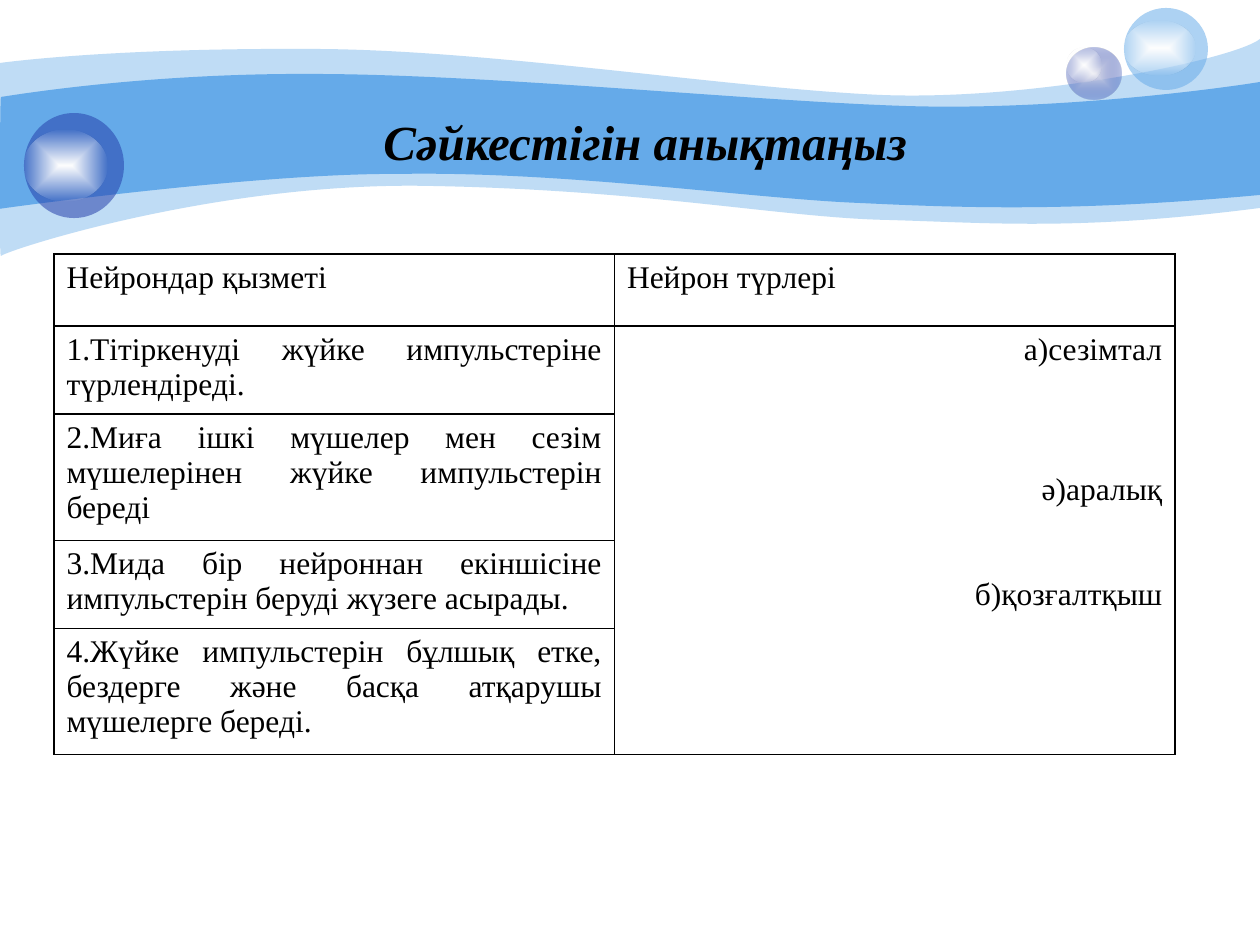
from lxml import etree
from pptx import Presentation
from pptx import util as u
from pptx.dml.color import RGBColor
from pptx.enum import shapes, text
from pptx.oxml import parse_xml
from pptx.oxml.ns import nsdecls, qn

PX_PER_INCH = 126
FONT = "Times New Roman"
COLORS = {"sky": "65AAE9", "navy": "233DA9", "pale": "E1E2ED",
          "white": "FFFFFF", "black": "000000"}

# Each outline: a start point, then lines (one point) and curves (three points)
PALE_WAVE = [
    [(0, 63)],
    [(30, 59), (135, 48), (311, 49)],
    [(486, 49), (725, 88), (881, 95)],
    [(1036, 101), (1235, 59), (1260, 39)],
    [(1260, 208)],
    [(1081, 231), (992, 223), (888, 220)],
    [(784, 218), (649, 190), (432, 186)],
    [(217, 181), (5, 251), (1, 256)],
    [(-1, 262), (0, 95), (0, 63)],
]
MAIN_WAVE = [
    [(1, 97)],
    [(3, 97), (139, 73), (312, 74)],
    [(486, 74), (750, 101), (905, 106)],
    [(1060, 111), (1230, 87), (1260, 82)],
    [(1260, 195)],
    [(1075, 212), (964, 208), (859, 203)],
    [(755, 199), (563, 171), (399, 174)],
    [(256, 173), (-3, 209), (-1, 209)],
    [(0, 209), (0, 97), (1, 97)],
]

HEADERS = ["Нейрондар қызметі", "Нейрон түрлері"]
FUNCTIONS = [
    "1.Тітіркенуді жүйке импульстеріне түрлендіреді.",
    "2.Миға ішкі мүшелер мен сезім мүшелерінен жүйке импульстерін береді",
    "3.Мида бір нейроннан екіншісіне импульстерін беруді жүзеге асырады.",
    "4.Жүйке импульстерін бұлшық етке, бездерге және басқа атқарушы "
    "мүшелерге береді.",
]
# Neuron types with the space before each, in points
NEURON_TYPES = [("а)сезімтал", 0), ("ә)аралық", 60), ("б)қозғалтқыш", 40)]
# Least heights: the rows grow with their text
ROW_HEIGHTS = [72] + [42] * len(FUNCTIONS)


def px(length):
    return u.Emu(round(length * 914400 / PX_PER_INCH))


def color(name):
    return RGBColor.from_string(COLORS[name])


def apply(target, formats):
    for name, value in formats.items():
        setattr(target, name, value)


def write(paragraph, words, size, alignment, **formats):
    run = paragraph.add_run()
    run.text = words
    paragraph.alignment = alignment
    apply(run.font, {"name": FONT, "size": u.Pt(size), **formats})
    run.font.color.rgb = color("black")


def paint(shape, name, opacity=100):
    shape.shadow.inherit = False
    shape.line.fill.background()
    shape.fill.solid()
    shape.fill.fore_color.rgb = color(name)
    if opacity < 100:
        tint = shape.fill._xPr.find(qn("a:solidFill"))[0]
        etree.SubElement(tint, qn("a:alpha"), val=str(opacity * 1000))


def paint_glow(shape, inner, outer, outer_opacity):
    """Fill from the middle outwards, with a see-through rim."""
    paint(shape, inner)
    properties = shape._element.spPr
    solid = properties.find(qn("a:solidFill"))
    properties.replace(solid, parse_xml(
        f'<a:gradFill {nsdecls("a")} rotWithShape="1"><a:gsLst>'
        f'<a:gs pos="0"><a:srgbClr val="{COLORS[inner]}"/></a:gs>'
        f'<a:gs pos="100000"><a:srgbClr val="{COLORS[outer]}">'
        f'<a:alpha val="{outer_opacity * 1000}"/></a:srgbClr></a:gs></a:gsLst>'
        '<a:path path="shape"><a:fillToRect l="50000" t="50000" r="50000" '
        'b="50000"/></a:path></a:gradFill>'))


def add_wave(slide, left, top, outline, opacity=100):
    places = [(px(x), px(y)) for segment in outline for x, y in segment]
    builder = slide.shapes.build_freeform(*places[0])
    builder.add_line_segments(places[1:], close=False)
    wave = builder.convert_to_shape(px(left), px(top))
    paint(wave, "sky", opacity)

    # Join each three points of a curve into one Bézier segment
    contour = next(wave._element.iter(qn("a:pathLst")))[0]
    lines = iter(contour.findall(qn("a:lnTo")))
    for segment in outline[1:]:
        steps = [next(lines) for _ in segment]
        if len(steps) == 3:
            curve = etree.Element(qn("a:cubicBezTo"))
            steps[0].addprevious(curve)
            for step in steps:
                curve.append(step[0])
                contour.remove(step)
    etree.SubElement(contour, qn("a:close"))


def add_bubble(slide, left, top, width, height, highlight, name, opacity, glow=False):
    """A ball with a highlight given as (offset down, width, height)."""
    def ellipse(*box):
        return slide.shapes.add_shape(shapes.MSO_SHAPE.OVAL, *map(px, box))

    ball = ellipse(left, top, width, height)
    if glow:
        paint_glow(ball, "pale", name, opacity)
    else:
        paint(ball, name, opacity)
    down, light_width, light_height = highlight
    light = ellipse(left, top + down, light_width, light_height)
    paint_glow(light, "white", "white", 0)


def add_title(slide, left, top, width, height):
    frame = slide.shapes.add_textbox(*map(px, (left, top, width, height))).text_frame
    apply(frame, {"word_wrap": True, "vertical_anchor": text.MSO_ANCHOR.MIDDLE})
    write(frame.paragraphs[0], "Сәйкестігін анықтаңыз", 28, text.PP_ALIGN.CENTER,
          bold=True, italic=True)


def add_borders(cell):
    properties = cell._tc.get_or_add_tcPr()
    for index, side in enumerate(("lnL", "lnR", "lnT", "lnB")):
        properties.insert(index, parse_xml(
            f'<a:{side} {nsdecls("a")} w="12700"><a:solidFill>'
            f'<a:srgbClr val="{COLORS["black"]}"/></a:solidFill></a:{side}>'))


def add_matching_table(slide, left, top, width, height):
    box = map(px, (left, top, width, height))
    holder = slide.shapes.add_table(len(ROW_HEIGHTS), 2, *box)
    table = holder.table
    apply(table, {"first_row": False, "horz_banding": False})
    for row, row_height in zip(table.rows, ROW_HEIGHTS):
        row.height = px(row_height)
    holder.height = px(height)
    for cell in table.iter_cells():
        cell.fill.background()
        add_borders(cell)
    table.cell(1, 1).merge(table.cell(len(FUNCTIONS), 1))

    # Headers and the left column
    entries = [(0, column, words) for column, words in enumerate(HEADERS)]
    entries += [(row, 0, words) for row, words in enumerate(FUNCTIONS, 1)]
    for row, column, words in entries:
        write(table.cell(row, column).text_frame.paragraphs[0], words, 18,
              text.PP_ALIGN.JUSTIFY)

    # Neuron types in the merged cell
    frame = table.cell(1, 1).text_frame
    for index, (words, gap) in enumerate(NEURON_TYPES):
        paragraph = frame.add_paragraph() if index else frame.paragraphs[0]
        write(paragraph, words, 18, text.PP_ALIGN.RIGHT)
        if gap:
            paragraph.space_before = u.Pt(gap)


def main():
    presentation = Presentation()
    apply(presentation, {"slide_width": u.Inches(10), "slide_height": u.Inches(7.5)})
    slide = presentation.slides.add_slide(presentation.slide_layouts[6])
    # Waves behind the title
    add_wave(slide, 0, 0, PALE_WAVE, 41)
    add_wave(slide, 0, 0, MAIN_WAVE)
    # Bubbles
    add_bubble(slide, 1067, 48, 54, 51, (0, 35, 34), "navy", 31, glow=True)
    add_bubble(slide, 1124, 8, 84, 82, (13, 71, 54), "sky", 53)
    add_bubble(slide, 24, 113, 100, 105, (17, 83, 71), "navy", 53)
    # Content
    add_title(slide, 114, 86, 1062, 110)
    add_matching_table(slide, 54, 254, 1121, 500)
    presentation.save("out.pptx")


if __name__ == "__main__":
    main()
